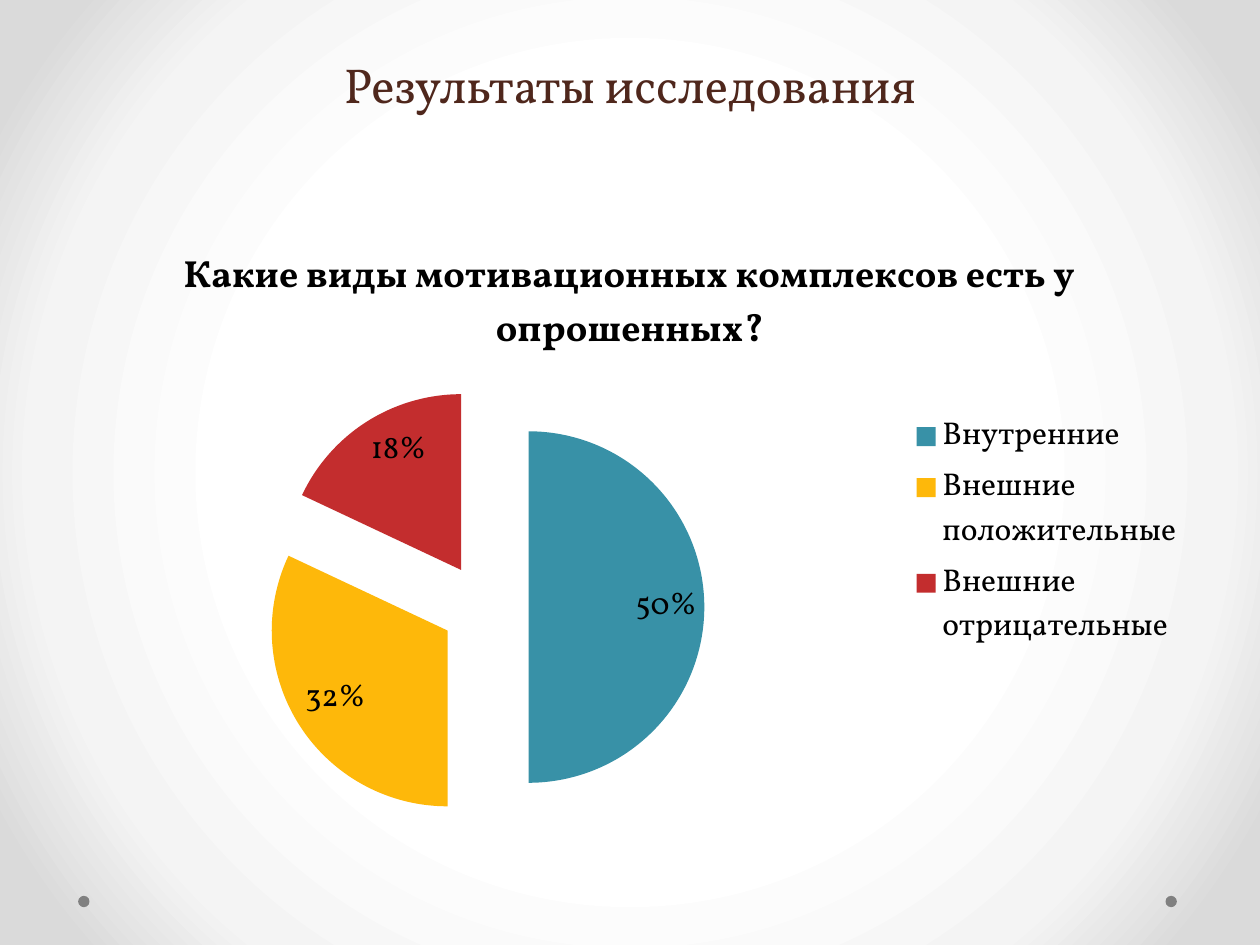
from pptx import Presentation
from pptx.chart.data import CategoryChartData
from pptx.dml.color import RGBColor
from pptx.enum.chart import XL_CHART_TYPE as ChartType
from pptx.enum.chart import XL_LABEL_POSITION as LabelPos
from pptx.enum.chart import XL_LEGEND_POSITION as LegendPos
from pptx.enum.shapes import MSO_SHAPE as Shape
from pptx.enum.text import MSO_ANCHOR as Anchor
from pptx.enum.text import MSO_AUTO_SIZE as AutoSize
from pptx.enum.text import PP_ALIGN as Align
from pptx.oxml import parse_xml
from pptx.oxml.ns import nsdecls
from pptx.util import Inches, Pt

FONT = "Vollkorn"
BROWN = RGBColor(0x4F, 0x27, 0x1C)
BLACK = RGBColor(0, 0, 0)
GREY = RGBColor(0x80, 0x80, 0x80)
TEAL = RGBColor(0x38, 0x91, 0xA7)
YELLOW = RGBColor(0xFE, 0xB8, 0x0A)
RED = RGBColor(0xC3, 0x2D, 0x2E)
GLOW = {50: RGBColor(0xFF, 0xFF, 0xFF),
        76: RGBColor(0xF4, 0xF4, 0xF4),
        92: RGBColor(0xDA, 0xDA, 0xDA)}

QUESTION = "Какие виды мотивационных комплексов есть у опрошенных?"
ANSWERS = [("Внутренние", 50, TEAL),
           ("Внешние положительные", 32, YELLOW),
           ("Внешние отрицательные", 18, RED)]


def set_attrs(obj, values):
    for name, value in values.items():
        setattr(obj, name, value)


def format_font(font, size, color, bold=False):
    set_attrs(font, {"name": FONT, "size": Pt(size), "bold": bold})
    font.color.rgb = color


def set_background(slide):
    """Radial gradient spreading from the slide centre."""
    fill = slide.background.fill
    fill.gradient()
    stops = "".join(f'<a:gs pos="{pos * 1000}"><a:srgbClr val="{color}"/></a:gs>'
                    for pos, color in GLOW.items())
    grad = parse_xml(
        f'<a:gradFill rotWithShape="1" {nsdecls("a")}><a:gsLst>{stops}</a:gsLst>'
        '<a:path path="circle"><a:fillToRect l="50000" t="50000" r="50000" b="50000"/>'
        '</a:path></a:gradFill>')
    old = slide.background._cSld.bg.bgPr.find(
        "{http://schemas.openxmlformats.org/drawingml/2006/main}gradFill")
    old.getparent().replace(old, grad)


def add_dot(slide, left, top, size=0.09):
    sp = slide.shapes.add_shape(Shape.OVAL, Inches(left), Inches(top),
                                Inches(size), Inches(size))
    sp.shadow.inherit = False
    sp.fill.solid()
    sp.fill.fore_color.rgb = GREY
    sp.line.fill.background()


def set_title(slide, text):
    sp = slide.shapes.title
    set_attrs(sp, {"left": Inches(0.5), "top": Inches(0),
                   "width": Inches(9), "height": Inches(1.75)})
    tf = sp.text_frame
    set_attrs(tf, {"word_wrap": True, "auto_size": AutoSize.NONE,
                   "vertical_anchor": Anchor.BOTTOM, "margin_bottom": Inches(0.85)})
    p = tf.paragraphs[0]
    set_attrs(p, {"alignment": Align.CENTER, "line_spacing": Pt(58)})
    r = p.add_run()
    r.text = text
    format_font(r.font, 28, BROWN)


def add_pie(slide, title, answers, explosion=25):
    data = CategoryChartData()
    data.categories = [name for name, _, _ in answers]
    data.add_series(title, [value for _, value, _ in answers])
    chart = slide.shapes.add_chart(ChartType.PIE, Inches(0.5), Inches(1.75),
                                   Inches(9), Inches(4.95), data).chart
    format_font(chart.font, 18, BLACK)

    # Heading and legend
    chart.has_title = True
    p = chart.chart_title.text_frame.paragraphs[0]
    r = p.add_run()
    r.text = title
    format_font(r.font, 21.6, BLACK, bold=True)
    chart.has_legend = True
    set_attrs(chart.legend, {"position": LegendPos.RIGHT, "include_in_layout": False})

    # Slices, pulled apart
    plot = chart.plots[0]
    plot.vary_by_categories = True
    series = plot.series[0]
    for i, (_, _, color) in enumerate(answers):
        fill = series.points[i].format.fill
        fill.solid()
        fill.fore_color.rgb = color
    series._element.tx.addnext(
        parse_xml(f'<c:explosion {nsdecls("c")} val="{explosion}"/>'))

    # Percent labels
    plot.has_data_labels = True
    labels = plot.data_labels
    set_attrs(labels, {"show_percentage": True, "show_value": False,
                       "position": LabelPos.INSIDE_END,
                       "number_format": "0%", "number_format_is_linked": False})
    format_font(labels.font, 18, BLACK)


def main():
    prs = Presentation()
    set_attrs(prs, {"slide_width": Inches(10), "slide_height": Inches(7.5)})
    slide = prs.slides.add_slide(prs.slide_layouts[5])
    set_background(slide)
    for left in (9.25, 0.62):
        add_dot(slide, left, 7.11)
    set_title(slide, "Результаты исследования")
    add_pie(slide, QUESTION, ANSWERS)
    prs.save("out.pptx")


if __name__ == "__main__":
    main()
